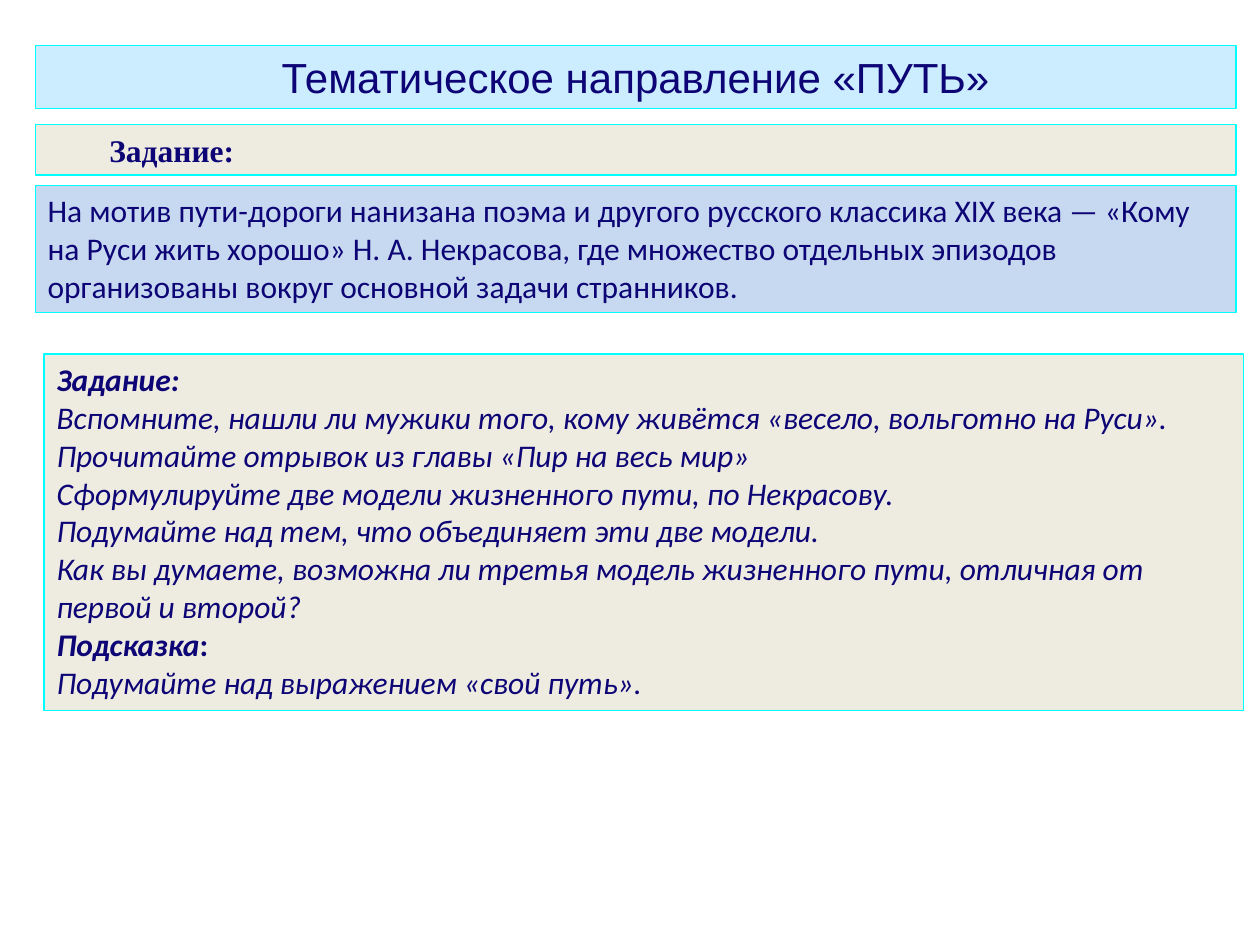
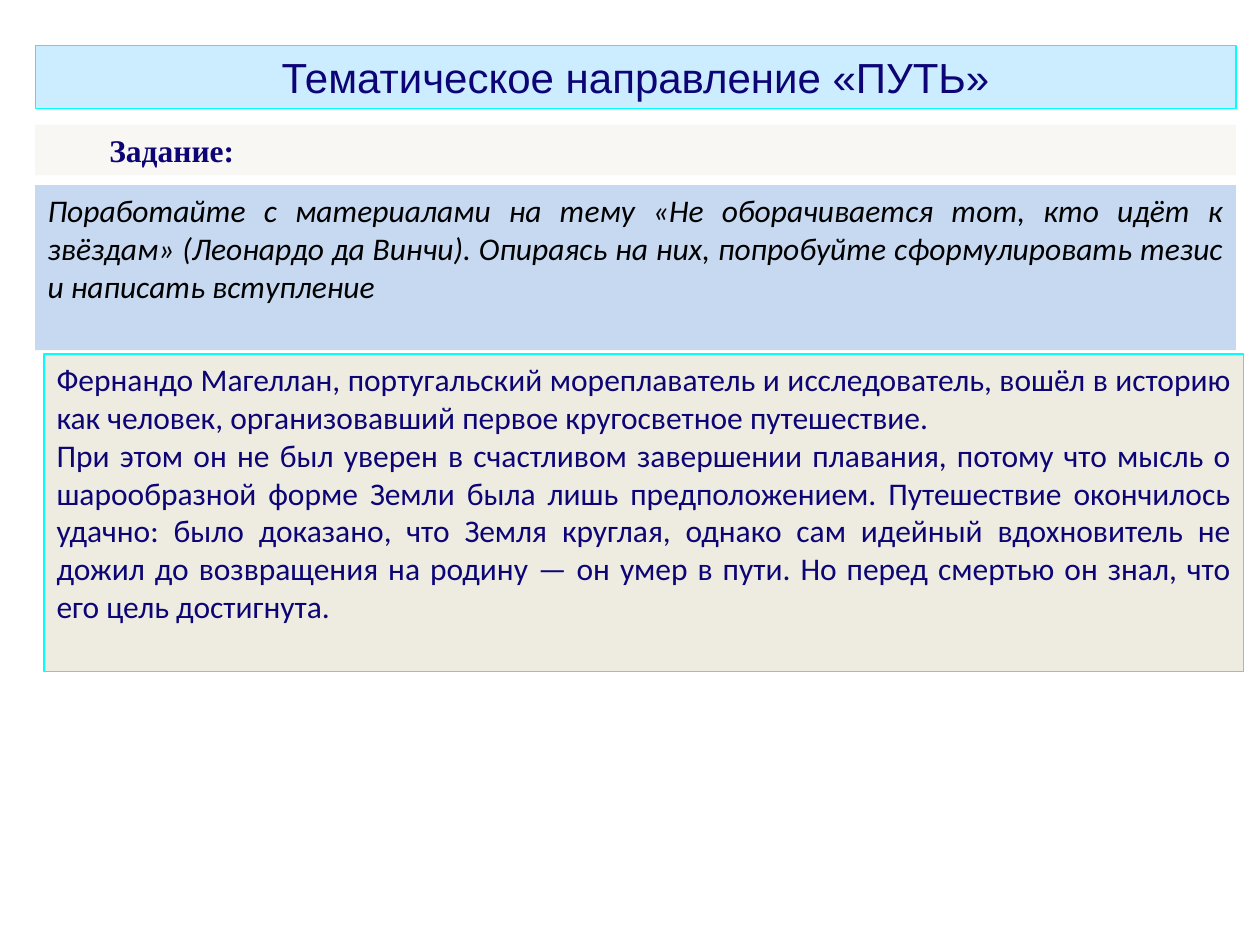
from pptx import Presentation
from pptx.dml.color import RGBColor
from pptx.enum.shapes import MSO_SHAPE as Shape
from pptx.enum.text import MSO_ANCHOR as Anchor, MSO_AUTO_SIZE as AutoSize, PP_ALIGN as Align
from pptx.util import Inches, Pt

NAVY = RGBColor(0x0D, 0x05, 0x75)
BLACK = RGBColor(0x00, 0x00, 0x00)
CYAN = RGBColor(0x00, 0xFF, 0xFF)
SKY = RGBColor(0xCC, 0xEC, 0xFF)
BLUE = RGBColor(0xC6, 0xD9, 0xF1)
SAND = RGBColor(0xEE, 0xEC, 0xE1)
PALE_SAND = RGBColor(0xF8, 0xF7, 0xF3)

COLUMNS, ROWS = 100, 75
BAND = (2.8, 95.3)
ANSWER_BAND = (3.5, 95.2)
TITLE_ROWS = (3.6, 5)
HEADING_ROWS = (9.9, 4)
TASK_TOP = 14.7
ANSWER_TOP = 28.1


class ThemeDeck:
    def __init__(self):
        self.deck = Presentation()
        self.deck.slide_width, self.deck.slide_height = Inches(10), Inches(7.5)
        self.column = self.deck.slide_width / COLUMNS
        self.row = self.deck.slide_height / ROWS
        self.page = None

    def add_page(self, title):
        self.page = self.deck.slides.add_slide(self.deck.slide_layouts[5])
        box = self.page.shapes.title
        box.left, box.top, box.width, box.height = self.place(BAND, TITLE_ROWS)
        self.dress(box, SKY, CYAN)
        box.text_frame.text = title
        self.format(box.text_frame.paragraphs[0], Align.CENTER, "Arial", 24)

    def place(self, band, rows):
        """Turn (left, width) columns and (top, height) rows into lengths."""
        (left, width), (top, height) = band, rows
        return [round(length) for length in (left * self.column, top * self.row,
                                             width * self.column, height * self.row)]

    def dress(self, box, fill, line):
        box.fill.solid()
        box.fill.fore_color.rgb = fill
        if line is None:
            box.line.fill.background()
        else:
            box.line.color.rgb = line
            box.line.width = Pt(0.75)
        box.text_frame.word_wrap = True
        box.text_frame.auto_size = AutoSize.NONE

    def format(self, para, align, font, size, color=NAVY, bold=False, italic=False):
        para.alignment = align
        for span in para.runs:
            span.font.name, span.font.size = font, Pt(size)
            span.font.color.rgb = color
            span.font.bold, span.font.italic = bold, italic

    def panel(self, band, rows, lines, fill, line=CYAN, align=Align.LEFT,
              font="Calibri", **style):
        """Draw a filled rectangle with one paragraph per line; return the paragraphs."""
        box = self.page.shapes.add_shape(Shape.RECTANGLE, *self.place(band, rows))
        box.shadow.inherit = False
        self.dress(box, fill, line)
        frame = box.text_frame
        frame.vertical_anchor = Anchor.TOP
        frame.text = "\n".join(lines)
        for para in frame.paragraphs:
            self.format(para, align, font, 18, **style)
        return frame.paragraphs

    def heading(self, text, fill=SAND, line=CYAN):
        para, = self.panel(BAND, HEADING_ROWS, [text], fill, line, Align.JUSTIFY,
                           "Times New Roman", bold=True)
        para._p.get_or_add_pPr().set("indent", str(Inches(0.49)))

    def task(self, height, text, **style):
        self.panel(BAND, (TASK_TOP, height), [text], BLUE, **style)

    def answer(self, height, lines, **style):
        return self.panel(ANSWER_BAND, (ANSWER_TOP, height), lines, SAND, **style)


def main():
    theme = ThemeDeck()
    title, heading = "Тематическое направление «ПУТЬ»", "Задание:"

    theme.add_page(title)
    theme.heading(heading)
    theme.task(10.1, "На мотив пути-дороги нанизана поэма и другого русского классика "
               "XIX века — «Кому на Руси жить хорошо» Н. А. Некрасова, где множество "
               "отдельных эпизодов организованы вокруг основной задачи странников.")
    paras = theme.answer(28.3, [
        heading,
        "Вспомните, нашли ли мужики того, кому живётся «весело, вольготно на Руси».",
        "Прочитайте отрывок из главы «Пир на весь мир»",
        "Сформулируйте две модели жизненного пути, по Некрасову.",
        "Подумайте над тем, что объединяет эти две модели.",
        "Как вы думаете, возможна ли третья модель жизненного пути, "
        "отличная от первой и второй?",
        "Подсказка",
        "Подумайте над выражением «свой путь».",
    ], italic=True)
    hint = paras[6]
    hint.add_run().text = ":"
    theme.format(hint, Align.LEFT, "Calibri", 18, italic=True)
    for span in (*paras[0].runs, *hint.runs):
        span.font.bold = True
    hint.runs[-1].font.italic = False

    theme.add_page(title)
    theme.heading(heading, PALE_SAND, None)
    theme.task(13.1, "Поработайте с материалами на тему «Не оборачивается тот, кто идёт к "
               "звёздам» (Леонардо да Винчи). Опираясь на них, попробуйте сформулировать "
               "тезис и написать вступление",
               line=None, align=Align.JUSTIFY, color=BLACK, italic=True)
    theme.answer(25.2, [
        "Фернандо Магеллан, португальский мореплаватель и исследователь, вошёл в историю "
        "как человек, организовавший первое кругосветное путешествие.",
        "При этом он не был уверен в счастливом завершении плавания, потому что мысль о "
        "шарообразной форме Земли была лишь предположением. Путешествие окончилось "
        "удачно: было доказано, что Земля круглая, однако сам идейный вдохновитель не "
        "дожил до возвращения на родину — он умер в пути. Но перед смертью он знал, что "
        "его цель достигнута.",
    ], align=Align.JUSTIFY)

    theme.deck.save("out.pptx")


if __name__ == "__main__":
    main()
